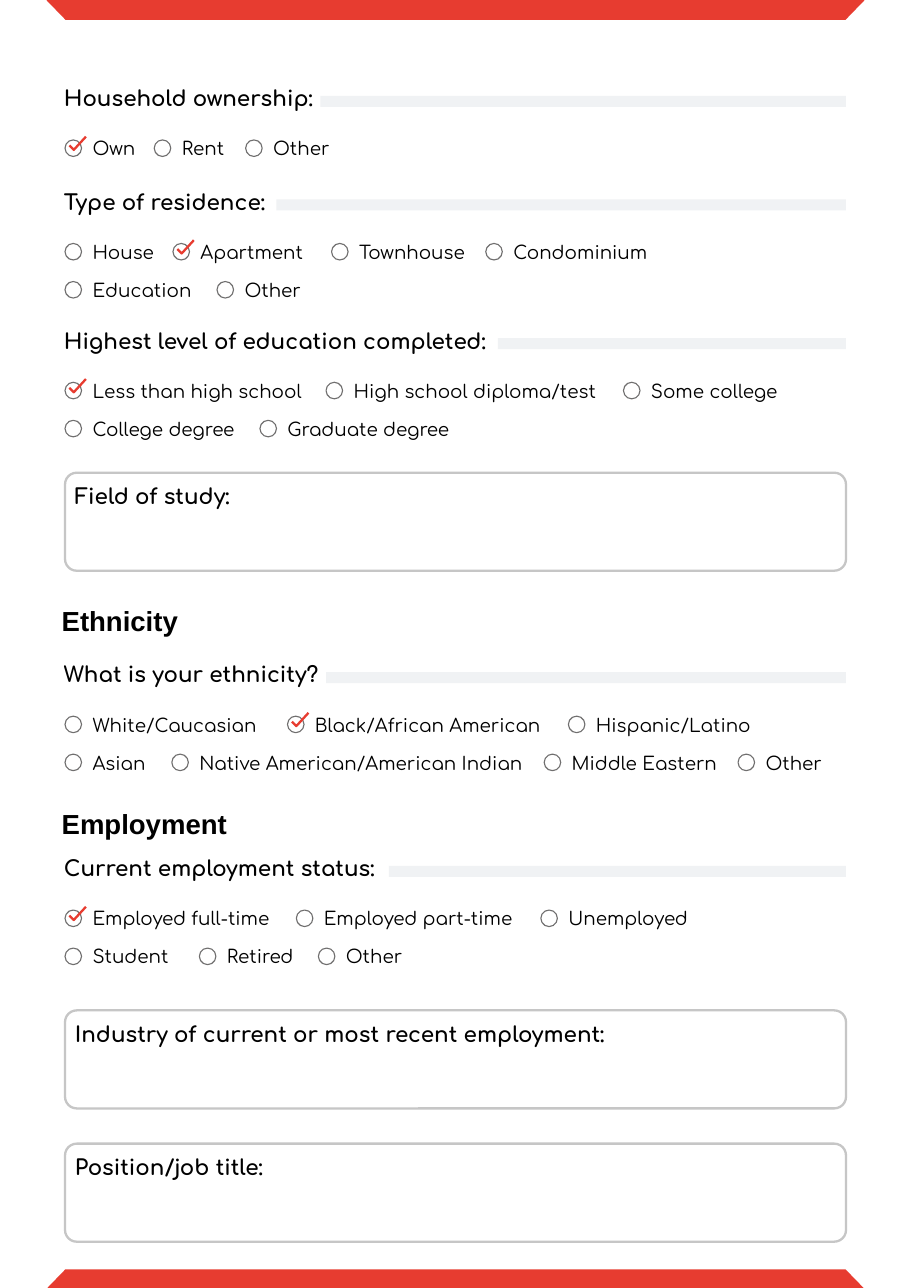
from pptx import Presentation
from pptx.dml.color import RGBColor
from pptx.enum import shapes, text
from pptx.util import Inches, Pt

COLORS = {"red": "E73C30", "bar": "F0F2F4", "circle": "706F6F", "frame": "C6C6C6", "ink": "000000"}

QUESTIONS = [
    (0.8, "Household ownership:", 2.91, [
        [(0.59, "Own", True), (1.4, "Rent", False), (2.23, "Other", False)],
    ]),
    (1.74, "Type of residence:", 2.51, [
        [(0.59, "House", False), (1.57, "Apartment", True),
         (3.01, "Townhouse", False), (4.41, "Condominium", False)],
        [(0.59, "Education", False), (1.97, "Other", False)],
    ]),
    (3.0, "Highest level of education completed:", 4.52, [
        [(0.59, "Less than high school", True), (2.96, "High school diploma/test", False),
         (5.66, "Some college", False)],
        [(0.59, "College degree", False), (2.36, "Graduate degree", False)],
    ]),
    (6.03, "What is your ethnicity?", 2.96, [
        [(0.59, "White/Caucasian", False), (2.61, "Black/African American", True),
         (5.16, "Hispanic/Latino", False)],
        [(0.59, "Asian", False), (1.56, "Native American/American Indian", False),
         (4.94, "Middle Eastern", False), (6.7, "Other", False)],
    ]),
    (7.79, "Current employment status:", 3.53, [
        [(0.59, "Employed full-time", True), (2.69, "Employed part-time", False),
         (4.91, "Unemployed", False)],
        [(0.59, "Student", False), (1.81, "Retired", False), (2.89, "Other", False)],
    ]),
]
HEADINGS = [(5.52, "Ethnicity"), (7.36, "Employment")]
ANSWER_BOXES = [
    (4.29, "Field of study:"),
    (9.17, "Industry of current or most recent employment:"),
    (10.38, "Position/job title:"),
]
BANDS = [(0, 180), (11.52, 0)]

PAGE_WIDTH, PAGE_HEIGHT = 8.27, 11.69
LEFT, RIGHT = 0.59, 7.68
FIRST_ROW, ROW_STEP = 0.47, 0.345
CIRCLE, LABEL_OFFSET = 0.15, 0.25
TICK = [(0.19, -0.03), (0.08, 0.09), (0.04, 0.05)]


def color(name):
    return RGBColor.from_string(COLORS[name])


def add_text(parent, words, left, top, width, size=12, font="Comfortaa", bold=False):
    box = parent.add_textbox(Inches(left), Inches(top), Inches(width), Inches(size * 0.015))
    frame = box.text_frame
    frame.margin_left = frame.margin_right = frame.margin_top = frame.margin_bottom = 0
    frame.word_wrap = True
    frame.auto_size = text.MSO_AUTO_SIZE.SHAPE_TO_FIT_TEXT
    paragraph = frame.paragraphs[0]
    paragraph.line_spacing = 0.9
    run = paragraph.add_run()
    run.text = words
    run.font.size = Pt(size)
    run.font.name = font
    run.font.bold = bold
    run.font.color.rgb = color("ink")


def paint(shape, fill=None, line=None, weight=0.75):
    shape.shadow.inherit = False
    if fill:
        shape.fill.solid()
        shape.fill.fore_color.rgb = color(fill)
    else:
        shape.fill.background()
    if line:
        shape.line.color.rgb = color(line)
        shape.line.width = Pt(weight)
    else:
        shape.line.fill.background()


def add_shape(parent, kind, left, top, width, height, **style):
    shape = parent.add_shape(kind, Inches(left), Inches(top), Inches(width), Inches(height))
    paint(shape, **style)
    return shape


def add_tick(parent, left, top):
    points = [(Inches(left + x), Inches(top + y)) for x, y in TICK]
    builder = parent.build_freeform(*points[0])
    builder.add_line_segments(points[1:], close=False)
    paint(builder.convert_to_shape(), line="red", weight=1.5)


def add_options(parent, options, top):
    ends = [left for left, _, _ in options[1:]] + [RIGHT]
    for (left, label, checked), end in zip(options, ends):
        add_shape(parent, shapes.MSO_SHAPE.OVAL, left, top, CIRCLE, CIRCLE, line="circle")
        label_left = left + LABEL_OFFSET
        add_text(parent, label, label_left, top, end - label_left)
        if checked:
            add_tick(parent, left, top)


def add_question(slide, top, title, bar_left, rows):
    group = slide.shapes.add_group_shape().shapes
    add_text(group, title, 0.58, top, bar_left - 0.58, size=14, bold=True)
    add_shape(group, shapes.MSO_SHAPE.RECTANGLE, bar_left, top + 0.07,
              RIGHT - bar_left, 0.1, fill="bar")
    for index, options in enumerate(rows):
        add_options(group, options, top + FIRST_ROW + index * ROW_STEP)


def add_answer_box(slide, top, title):
    group = slide.shapes.add_group_shape().shapes
    frame = add_shape(group, shapes.MSO_SHAPE.ROUNDED_RECTANGLE, LEFT, top,
                      RIGHT - LEFT, 0.89, line="frame", weight=1.5)
    frame.adjustments[0] = 0.12
    add_text(group, title, 0.68, top + 0.12, 4.97, size=14, bold=True)


def main():
    presentation = Presentation()
    presentation.slide_width = Inches(PAGE_WIDTH)
    presentation.slide_height = Inches(PAGE_HEIGHT)
    slide = presentation.slides.add_slide(presentation.slide_layouts[6])
    for top, rotation in BANDS:
        band = add_shape(slide.shapes, shapes.MSO_SHAPE.TRAPEZOID, 0.42, top, 7.43, 0.18, fill="red")
        band.adjustments[0] = 0.97
        band.rotation = rotation
    for question in QUESTIONS:
        add_question(slide, *question)
    for top, title in HEADINGS:
        add_text(slide.shapes, title, 0.56, top, 3.28, size=18, font="Arial", bold=True)
    for top, title in ANSWER_BOXES:
        add_answer_box(slide, top, title)
    presentation.save("out.pptx")


if __name__ == "__main__":
    main()
